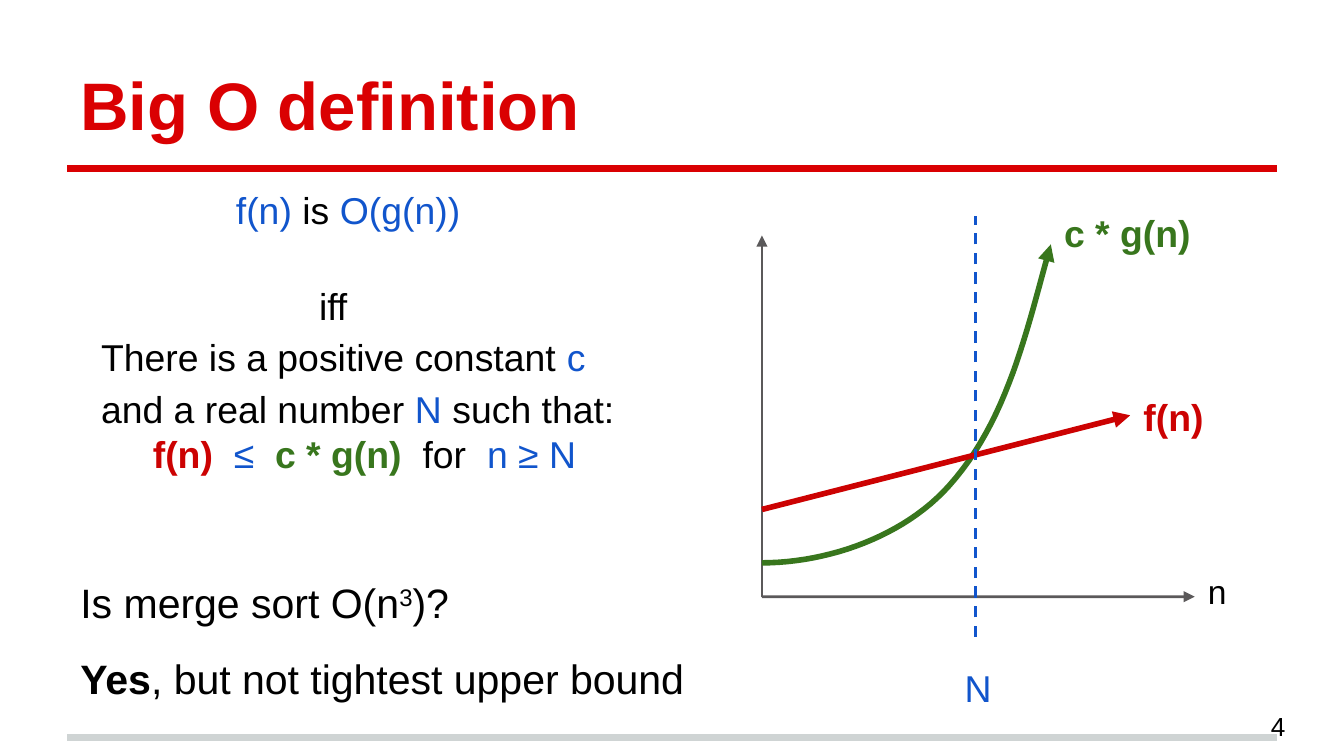
import lxml.etree
import pptx
import pptx.dml.color
import pptx.enum.dml
import pptx.enum.shapes
import pptx.enum.text
import pptx.oxml.ns
import pptx.util

Cm = pptx.util.Cm
Pt = pptx.util.Pt
qn = pptx.oxml.ns.qn
ANCHOR = pptx.enum.text.MSO_ANCHOR

RED, DARK_RED, GREEN, BLUE = "DA0002", "CC0202", "38761D", "1155CC"
BLACK, AXIS, FOOT = "000000", "5B595A", "CFD4D4"


def rgb(value):
    """Turn a hex string into a colour."""
    return pptx.dml.color.RGBColor.from_string(value)


def style_line(s, color, width, arrow=False):
    """Set the colour and width of an outline, with an optional arrowhead."""
    s.line.color.rgb = rgb(color)
    s.line.width = Pt(width)
    if arrow:
        ln = s.line._get_or_add_ln()
        lxml.etree.SubElement(ln, qn("a:tailEnd"), type="triangle")


def add_line(slide, start, end, color, width, arrow=False):
    """Draw a straight line between two points in centimetres."""
    kind = pptx.enum.shapes.MSO_CONNECTOR.STRAIGHT
    s = slide.shapes.add_connector(kind, *map(Cm, start + end))
    style_line(s, color, width, arrow)
    lxml.etree.SubElement(s._element.spPr, qn("a:effectLst"))
    return s


def add_box(slide, box, anchor=ANCHOR.TOP):
    """Add a wrapping text box with even insets."""
    s = slide.shapes.add_textbox(*map(Cm, box))
    tf = s.text_frame
    tf.word_wrap = True
    tf.vertical_anchor = anchor
    tf.margin_left = tf.margin_right = Cm(0.25)
    tf.margin_top = tf.margin_bottom = Cm(0.25)
    return s


def fill_paragraph(p, runs, size):
    """Write runs of text, colour, boldness and extra run attributes."""
    p.font.name = "Arial"
    p.font.size = Pt(size)
    for text, color, bold, extra in runs:
        r = p.add_run()
        r.text = text
        r.font.color.rgb = rgb(color)
        r.font.bold = bold
        for key, value in extra.items():
            r.font._element.set(key, value)


def add_text(slide, box, runs, size, anchor=ANCHOR.TOP):
    """Add a text box that holds one paragraph."""
    s = add_box(slide, box, anchor)
    fill_paragraph(s.text_frame.paragraphs[0], runs, size)
    return s


def run(text, color=BLACK, bold=False, **extra):
    """Describe one run."""
    return text, color, bold, extra


def add_header(slide, x, y, w, h):
    """Place the title above its red rule."""
    add_line(slide, (x, y + h), (x + w, y + h), RED, 4)
    title = [run("Big O definition", RED, True)]
    add_text(slide, (x, y, w, h - 0.21), title, 36, ANCHOR.BOTTOM)


def add_footer(slide, x, y, w, h):
    """Place the grey rule and the slide number."""
    add_line(slide, (x, y + 0.76), (x + w, y + 0.76), FOOT, 4)
    add_text(slide, (x + w - 0.36, y, 1.52, h), [run("4")], 14, ANCHOR.MIDDLE)


def add_definition(slide, x, y, w, h):
    """Write the definition, one indented paragraph a line."""
    gap = run(" ", spc="556")
    lines = [
        (2.94, 0, 1, [run("f(n) ", BLUE), run("is "), run("O(g(n))", BLUE)]),
        (4.51, 24, 1.15, [run("iff")]),
        (0.39, 0, 1.15, [run("There is a positive constant "), run("c", BLUE)]),
        (0.39, 0, 1.15, [run("and a real number "), run("N", BLUE), run(" such that:")]),
        (1.37, 0, 1, [run("f(n)", DARK_RED, True), gap, run("≤", BLUE), gap,
                      run("c * g(n)", GREEN, True), gap, run("for"), gap,
                      run("n ≥ N", BLUE)]),
    ]
    tf = add_box(slide, (x, y, w, h)).text_frame
    for i, (indent, before, spacing, runs) in enumerate(lines):
        p = tf.add_paragraph() if i else tf.paragraphs[0]
        fill_paragraph(p, runs, 20)
        p.space_before = Pt(before)
        p.line_spacing = spacing
        p._p.get_or_add_pPr().set("marL", str(Cm(indent)))


def add_question(slide, x, y, w, h):
    """Write the question and, below it, the answer."""
    question = [run("Is merge sort O(n"), run("3", baseline="30000"), run(")?")]
    answer = [run("Yes", bold=True), run(", but not tightest upper bound")]
    add_text(slide, (x, y, w, 1.3), question, 22)
    add_text(slide, (x, y + h - 1.3, w, 1.3), answer, 22)


def bezier(points, t):
    """Return the point at t on a cubic curve."""
    weights = ((1 - t) ** 3, 3 * t * (1 - t) ** 2, 3 * t * t * (1 - t), t ** 3)
    return tuple(sum(k * p[i] for k, p in zip(weights, points)) for i in (0, 1))


def add_curve(slide, knots, color, width):
    """Draw a chain of cubic curves as an open outline with an arrowhead."""
    steps = 24
    points = [bezier(knots[i:i + 4], n / steps)
              for i in range(0, len(knots) - 1, 3) for n in range(1, steps + 1)]
    pen = slide.shapes.build_freeform(Cm(knots[0][0]), Cm(knots[0][1]))
    pen.add_line_segments([(Cm(a), Cm(b)) for a, b in points], close=False)
    s = pen.convert_to_shape()
    s.fill.background()
    s.shadow.inherit = False
    style_line(s, color, width, True)


def add_growth_graph(slide, x, y, w, h):
    """Sketch both functions, their axes and the crossing at N."""
    def at(dx, dy):
        return x + dx, y + dy

    def label(dx, dy, lw, lh, text, color, size=20, bold=False):
        return add_text(slide, at(dx, dy) + (lw, lh), [run(text, color, bold)], size)

    origin = at(0, 7.55)
    n_label = label(w - 1.07, 6.81, 1.07, 1.48, "n", BLACK, 18)
    f_label = label(6.96, 3.47, 2.03, 1.3, "f(n)", DARK_RED, bold=True)
    label(5.46, 0, 3.58, 1.3, "c * g(n)", GREEN, bold=True)
    label(3.58, h - 1.3, 1.45, 1.3, "N", BLUE)

    add_line(slide, origin, at(0, 0.72), AXIS, 1.5, True)
    n_axis = add_line(slide, origin, at(w - 1.07, 7.55), AXIS, 1.5, True)
    n_axis.end_connect(n_label, 1)
    knots = [(0, 6.91), (1.27, 6.91), (2.69, 6.4), (3.53, 5.46),
             (4.65, 4.22), (5.01, 2.49), (5.46, 0.89)]
    add_curve(slide, [at(*k) for k in knots], GREEN, 3)
    f_line = add_line(slide, at(0, 5.9), at(6.96, 4.12), DARK_RED, 3, True)
    f_line.end_connect(f_label, 1)
    threshold = add_line(slide, at(4.04, 8.31), at(4.04, 0.36), BLUE, 1.5)
    threshold.line.dash_style = pptx.enum.dml.MSO_LINE.DASH


def main():
    """Build the slide and save it."""
    prs = pptx.Presentation()
    prs.slide_width, prs.slide_height = Cm(25.4), Cm(14.29)
    slide = prs.slides.add_slide(prs.slide_layouts[6])
    add_footer(slide, 1.27, 13.18, 22.86, 1.09)
    add_header(slide, 1.27, 0.58, 22.86, 2.6)
    add_definition(slide, 1.27, 3.28, 11.1, 6.91)
    add_growth_graph(slide, 14.4, 3.73, 9.25, 9.89)
    add_question(slide, 1.27, 10.67, 13.31, 2.74)
    prs.save("out.pptx")


if __name__ == "__main__":
    main()
